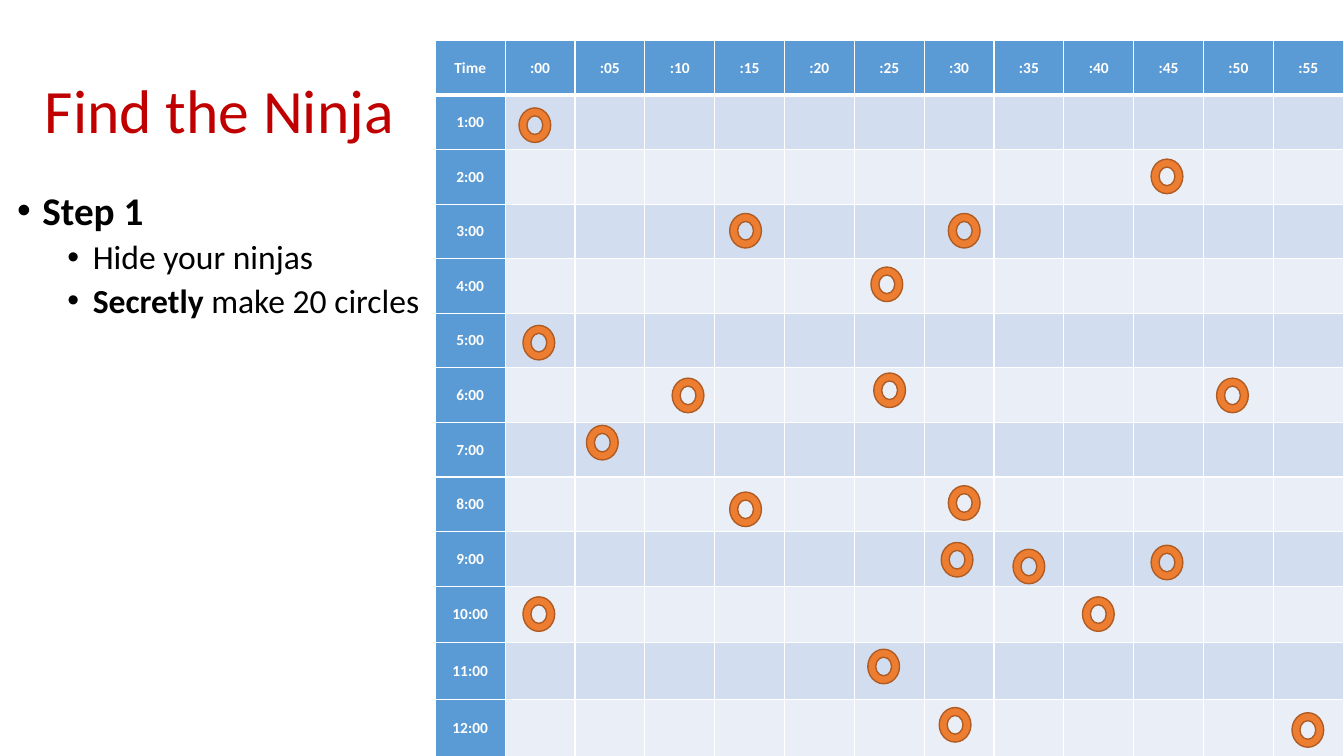
from lxml import etree
from pptx import Presentation
from pptx.dml.color import RGBColor
from pptx.enum.shapes import MSO_SHAPE
from pptx.enum.text import MSO_ANCHOR, PP_ALIGN
from pptx.oxml.ns import qn
from pptx.util import Cm, Pt

DONUT = MSO_SHAPE.DONUT
MIDDLE, TOP = MSO_ANCHOR.MIDDLE, MSO_ANCHOR.TOP
CENTER, LEFT = PP_ALIGN.CENTER, PP_ALIGN.LEFT

RED = RGBColor(0xC0, 0x00, 0x00)
BLACK = RGBColor(0x00, 0x00, 0x00)
WHITE = RGBColor(0xFF, 0xFF, 0xFF)
BLUE = RGBColor(0x5B, 0x9B, 0xD5)
BAND_DARK = RGBColor(0xD2, 0xDE, 0xEF)
BAND_LIGHT = RGBColor(0xEA, 0xEF, 0xF7)
ORANGE = RGBColor(0xED, 0x7D, 0x31)
BROWN = RGBColor(0xAF, 0x5C, 0x24)

HEADERS = ["Time"] + [f":{minute:02d}" for minute in range(0, 60, 5)]
HOURS = [f"{hour}:00" for hour in range(1, 13)]
ROW_HEIGHTS = [1.375] * 10 + [1.43] * 3

STEPS = [
    (0, [("Step 1", True)]),
    (1, [("Hide your ninjas", False)]),
    (1, [("Secretly", True), (" make 20 circles", False)]),
]

NINJAS = [
    (13.18, 8.2), (14.78, 10.72), (18.39, 5.38), (13.18, 15.04),
    (18.39, 12.4), (22.02, 9.4), (21.95, 6.73), (23.9, 5.38),
    (25.53, 13.84), (21.87, 16.36), (13.08, 2.72), (29.01, 4.01),
    (29.01, 13.74), (32.56, 17.96), (16.94, 9.53), (23.67, 17.83),
    (23.72, 13.67), (23.9, 12.24), (27.28, 15.04), (30.66, 9.53),
]


def add_run(p, text, size=18, bold=False, color=BLACK, font="Calibri"):
    r = p.add_run()
    r.text = text
    r.font.name = font
    r.font.size = Pt(size)
    r.font.bold = bold
    r.font.color.rgb = color


class NinjaSlide:
    def __init__(self, prs):
        self.s = prs.slides.add_slide(prs.slide_layouts[6])
        self.bullet_styles = {0: (28, 10, 0.64), 1: (24, 5, 1.91)}
        self.hanging = 0.64

    def text_box(self, x, y, w, h, anchor=TOP):
        tf = self.s.shapes.add_textbox(Cm(x), Cm(y), Cm(w), Cm(h)).text_frame
        tf.word_wrap = True
        tf.vertical_anchor = anchor
        return tf

    def title(self, text, x, y, w, h):
        p = self.text_box(x, y, w, h, MIDDLE).paragraphs[0]
        p.alignment = CENTER
        p.line_spacing = 0.9
        add_run(p, text, size=44, color=RED)

    def bullets(self, items, x, y, w, h):
        tf = self.text_box(x, y, w, h)
        for i, (level, runs) in enumerate(items):
            size, space, margin = self.bullet_styles[level]
            p = tf.add_paragraph() if i else tf.paragraphs[0]
            p.level = level
            p.alignment = LEFT
            p.line_spacing = 0.9
            p.space_before = Pt(space)
            pPr = p._p.get_or_add_pPr()
            pPr.set("marL", str(Cm(margin)))
            pPr.set("indent", str(-Cm(self.hanging)))
            etree.SubElement(pPr, qn("a:buFont")).set("typeface", "Arial")
            etree.SubElement(pPr, qn("a:buChar")).set("char", "•")
            for text, bold in runs:
                add_run(p, text, size=size, bold=bold)

    def borders(self, cell, top, bottom):
        tcPr = cell._tc.get_or_add_tcPr()
        for side, width in (("L", 1), ("R", 1), ("T", top), ("B", bottom)):
            ln = etree.SubElement(tcPr, qn(f"a:ln{side}"), w=str(Pt(width)))
            fill = etree.SubElement(ln, qn("a:solidFill"))
            etree.SubElement(fill, qn("a:srgbClr")).set("val", str(WHITE))

    def cell(self, cell, text, color, top, bottom):
        self.borders(cell, top, bottom)
        cell.fill.solid()
        cell.fill.fore_color.rgb = color
        if text:
            cell.vertical_anchor = MIDDLE
            cell.margin_left = cell.margin_right = Cm(0.15)
            cell.margin_top = cell.margin_bottom = 0
            p = cell.text_frame.paragraphs[0]
            p.alignment = CENTER
            add_run(p, text, size=11, bold=True, color=WHITE)

    def timetable(self, x, y, w):
        rows = [HEADERS] + [[hour] + [""] * 12 for hour in HOURS]
        table = self.s.shapes.add_table(
            len(rows), len(HEADERS), Cm(x), Cm(y), Cm(w), Cm(sum(ROW_HEIGHTS))
        ).table
        for column in table.columns:
            column.width = Cm(w / len(HEADERS))
        for i, texts in enumerate(rows):
            table.rows[i].height = Cm(ROW_HEIGHTS[i])
            band = BAND_DARK if i % 2 else BAND_LIGHT
            top, bottom = 3 if i == 1 else 1, 3 if i == 0 else 1
            for j, text in enumerate(texts):
                self.cell(table.cell(i, j), text, BLUE if text else band, top, bottom)

    def ninja(self, x, y):
        sp = self.s.shapes.add_shape(DONUT, Cm(x), Cm(y), Cm(0.8), Cm(0.87))
        sp.shadow.inherit = False
        sp.fill.solid()
        sp.fill.fore_color.rgb = ORANGE
        sp.line.color.rgb = BROWN
        sp.line.width = Pt(1)


def main():
    prs = Presentation()
    prs.slide_width, prs.slide_height = Cm(33.87), Cm(19.05)
    slide = NinjaSlide(prs)
    slide.title("Find the Ninja", 0.1, 1.02, 10.87, 3.68)
    slide.timetable(10.97, 1.02, 22.89)
    slide.bullets(STEPS, 0.18, 4.7, 29.21, 12.09)
    for x, y in NINJAS:
        slide.ninja(x, y)
    prs.save("out.pptx")


if __name__ == "__main__":
    main()
